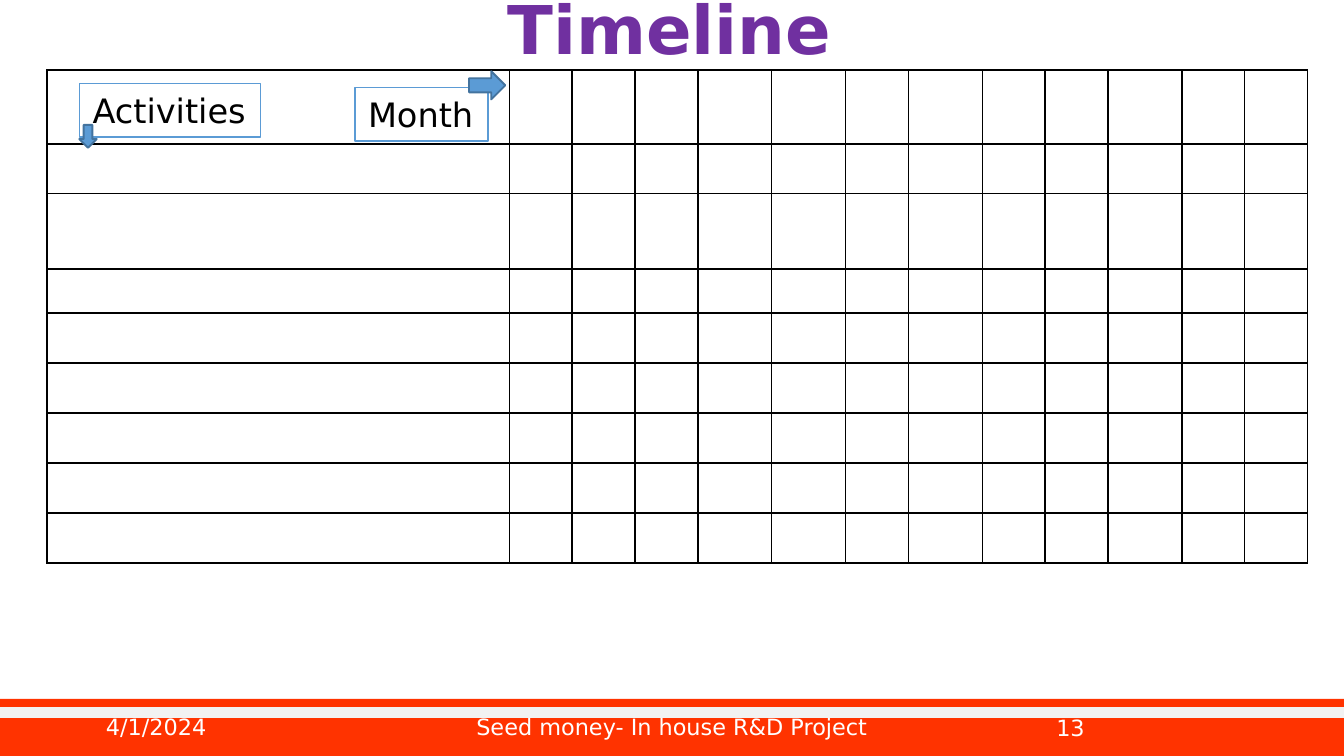
"""Build the project timeline slide with an empty activity-by-month grid."""
import pptx
import pptx.dml.color
import pptx.enum.shapes
import pptx.enum.text
import pptx.oxml
import pptx.oxml.ns
import pptx.util

Inches, Pt = pptx.util.Inches, pptx.util.Pt
SHAPE = pptx.enum.shapes.MSO_SHAPE
ALIGN = pptx.enum.text.PP_ALIGN
ANCHOR = pptx.enum.text.MSO_ANCHOR


def rgb(value):
    """Return the colour of a hex string."""
    return pptx.dml.color.RGBColor.from_string(value)


def set_text(sp, text, size, color, align, bold=False):
    """Write one middle-anchored paragraph into a shape."""
    tf = sp.text_frame
    tf.vertical_anchor = ANCHOR.MIDDLE
    tf.auto_size = pptx.enum.text.MSO_AUTO_SIZE.NONE
    p = tf.paragraphs[0]
    p.text = text
    p.alignment = align
    p.font.name = "DejaVu Sans"
    p.font.size = Pt(size)
    p.font.bold = bold
    p.font.color.rgb = rgb(color)
    return tf


prs = pptx.Presentation()
prs.slide_width, prs.slide_height = Inches(10), Inches(10 * 9 / 16)
s = prs.slides.add_slide(prs.slide_layouts[5])

title = s.shapes.title
title.left, title.top = Inches(0.67), Inches(0.13)
title.width, title.height = Inches(8.62), Inches(0.23)
tf = set_text(title, "Timeline", 36, "7030A0", ALIGN.CENTER, True)
tf.paragraphs[0].line_spacing = 0.9

band = s.shapes.add_shape(SHAPE.RECTANGLE, Inches(-0.02), Inches(5.2), Inches(10.02), Inches(0.43))
band.shadow.inherit = False
band.fill.solid()
band.fill.fore_color.rgb = rgb("FF3300")
band.line.fill.background()

stripe = s.shapes.add_connector(
    pptx.enum.shapes.MSO_CONNECTOR.STRAIGHT, Inches(-0.02), Inches(5.3), Inches(10), Inches(5.3))
stripe.line.color.rgb = rgb("F2F2F2")
stripe.line.width = Pt(6)
stripe._element.spPr.append(pptx.oxml.parse_xml(f"<a:effectLst {pptx.oxml.ns.nsdecls('a')}/>"))

footers = [
    ("4/1/2024", 0.69, 2.25, 0.21, ALIGN.LEFT),
    ("Seed money- In house R&D Project", 3.31, 3.38, 0.21, ALIGN.CENTER),
    ("13", 7.06, 1.11, 0.22, ALIGN.RIGHT),
]
for text, x, w, h, align in footers:
    sp = s.shapes.add_textbox(Inches(x), Inches(5.3), Inches(w), Inches(h))
    set_text(sp, text, 12, "FFFFFF", align).word_wrap = True

table_w, table_h, activity_w, wide = 9.38, 3.67, 3.44, 0.55
wide_months = (4, 5, 7, 10)
narrow = (table_w - activity_w - len(wide_months) * wide) / (12 - len(wide_months))
cols = [activity_w] + [wide if month in wide_months else narrow for month in range(1, 13)]
top_rows = [0.55, 0.37, 0.56, 0.33]
rows = top_rows + [(table_h - sum(top_rows)) / 5] * 5
table = s.shapes.add_table(
    len(rows), len(cols), Inches(0.35), Inches(0.52), Inches(table_w), Inches(table_h)).table
table.first_row = table.horz_banding = False
for col, w in zip(table.columns, cols):
    col.width = Inches(w)
for row, h in zip(table.rows, rows):
    row.height = Inches(h)
for cell in table.iter_cells():
    cell.margin_top = cell.margin_bottom = 0
    for side in ("lnL", "lnR", "lnT", "lnB"):
        cell._tc.get_or_add_tcPr().append(pptx.oxml.parse_xml(
            f'<a:{side} {pptx.oxml.ns.nsdecls("a")} w="{Pt(1)}"><a:solidFill>'
            f'<a:srgbClr val="000000"/></a:solidFill></a:{side}>'))
    cell.fill.background()
    cell.text_frame.paragraphs[0].font.size = Pt(12)

labels = [
    ("Activities", 0.59, 0.62, 1.35, SHAPE.DOWN_ARROW, 0.59, 0.93, 0.13, 0.17),
    ("Month", 2.64, 0.65, 0.99, SHAPE.RIGHT_ARROW, 3.49, 0.53, 0.27, 0.21),
]
for text, x, y, w, kind, arrow_x, arrow_y, arrow_w, arrow_h in labels:
    sp = s.shapes.add_shape(SHAPE.RECTANGLE, Inches(x), Inches(y), Inches(w), Inches(0.4))
    sp.shadow.inherit = False
    sp.fill.background()
    sp.line.color.rgb = rgb("5B9BD5")
    sp.line.width = Pt(0.75)
    set_text(sp, text, 18, "000000", ALIGN.LEFT).word_wrap = False

    arrow = s.shapes.add_shape(
        kind, Inches(arrow_x), Inches(arrow_y), Inches(arrow_w), Inches(arrow_h))
    arrow.shadow.inherit = False
    arrow.fill.solid()
    arrow.fill.fore_color.rgb = rgb("5B9BD5")
    arrow.line.color.rgb = rgb("43739E")
    arrow.line.width = Pt(1)

prs.save("out.pptx")
